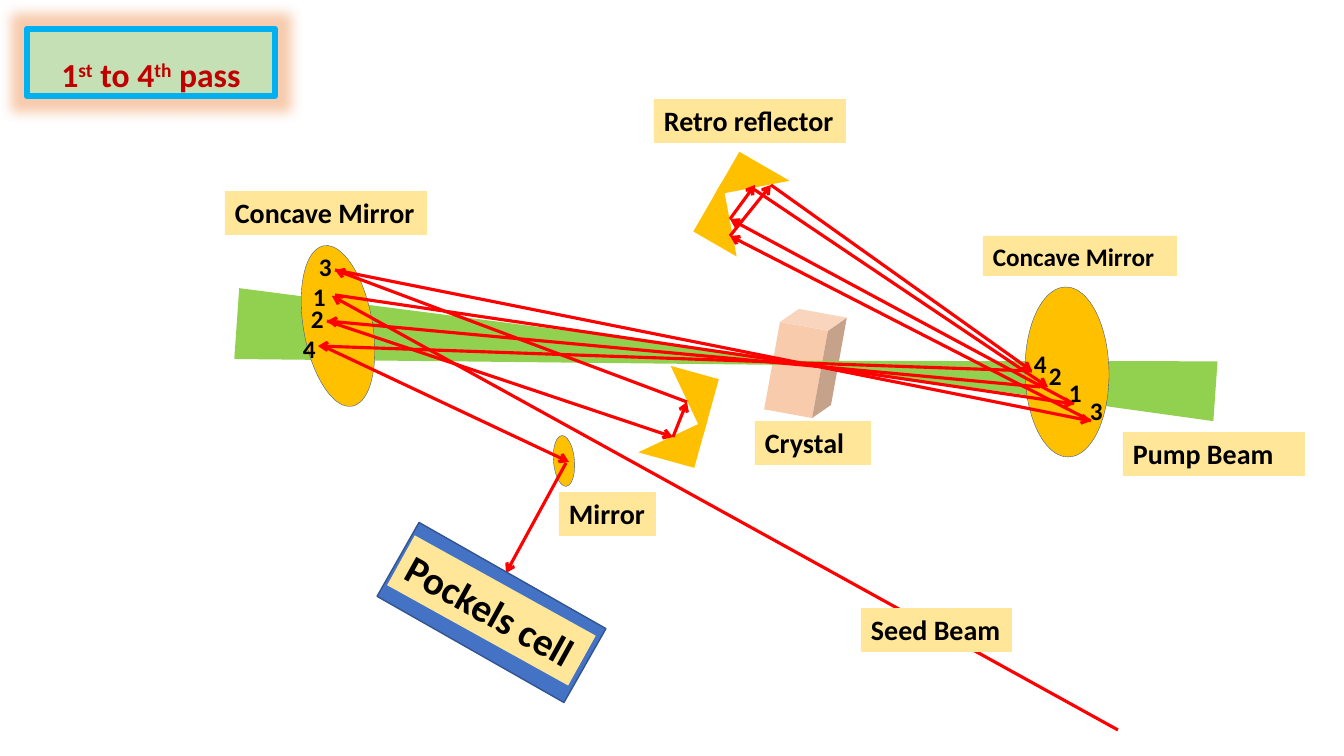
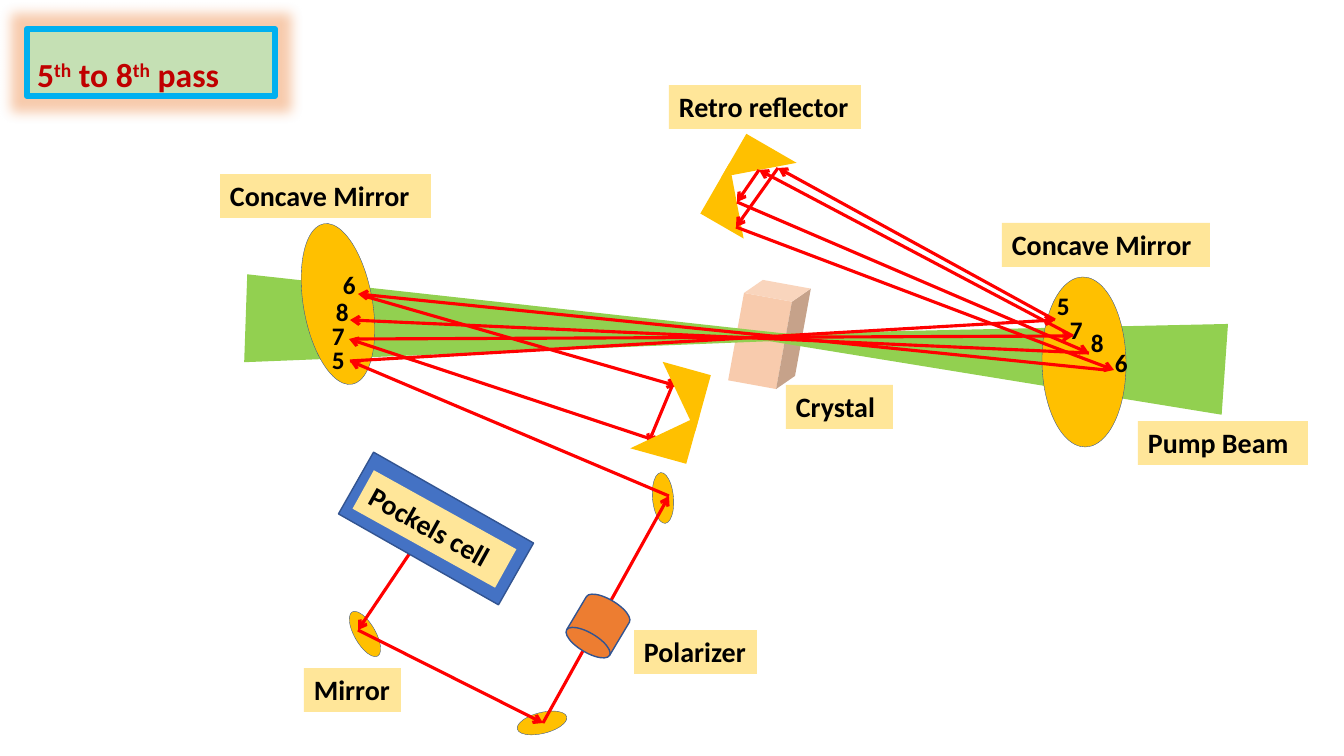
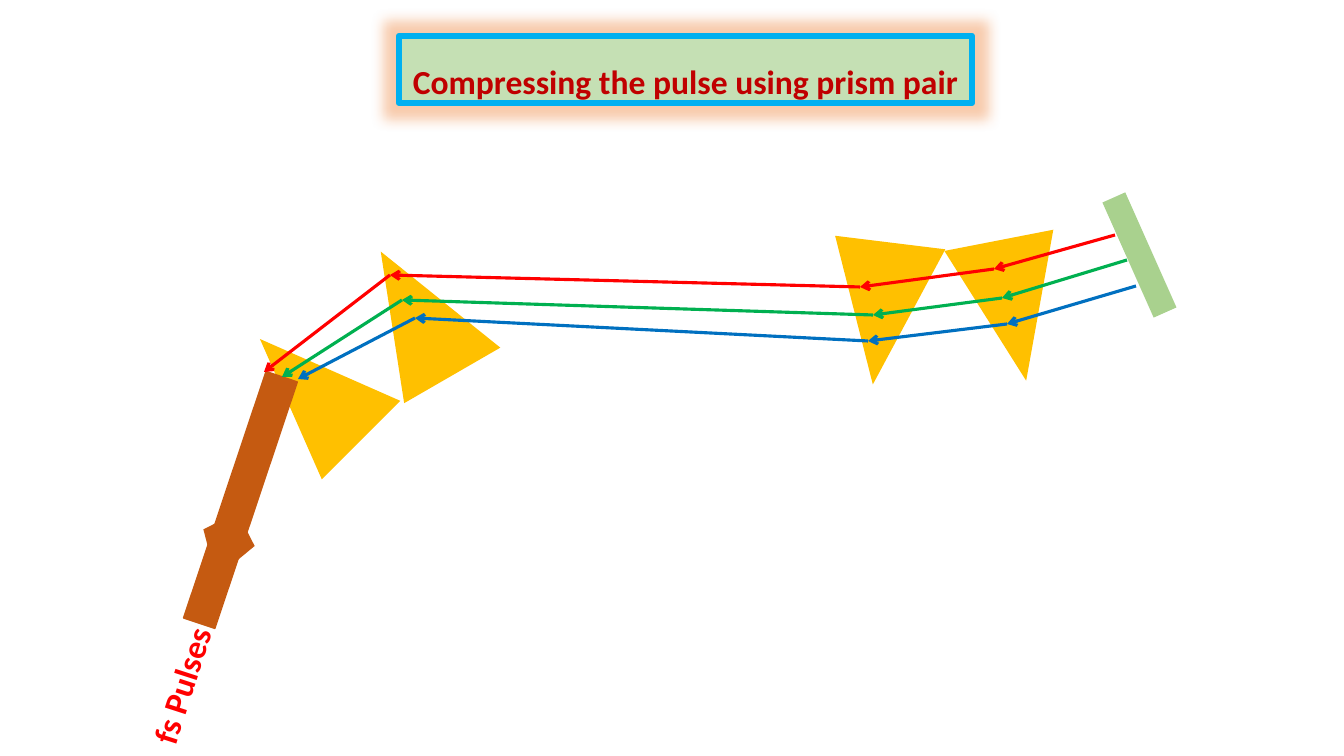
"""Build three slides on a multipass amplifier and a prism compressor."""
import math

import lxml.etree
import pptx
import pptx.dml.color
import pptx.enum.shapes
import pptx.enum.text
import pptx.oxml.ns
import pptx.util

SCALE = 914400 / 100.8
FONT = "Calibri"
HUES = {
    "gold": "FFC000", "edge": "325491", "pump": "92D050", "cube": "F8CBAD",
    "beam": "FF0000", "green": "00B050", "blue": "0070C0", "note": "FFE699",
    "cell": "4472C4", "disk": "ED7D31", "plate": "A9D18E", "pulse": "C55A11",
    "panel": "C5E0B4", "frame": "00B0F0", "title": "C00000", "ink": "000000",
}
FORMS = pptx.enum.shapes.MSO_SHAPE
ALIGN = pptx.enum.text.PP_ALIGN
LARGE = (84, 170)
TALL = (69, 163)
SMALL = (21, 51)


def px(count):
    """Turn pixels into EMU."""
    return pptx.util.Emu(round(count * SCALE))


def hue(name):
    """Look up a colour."""
    return pptx.dml.color.RGBColor.from_string(HUES[name])


def child(node, tag, **attrs):
    """Append a drawing element."""
    return lxml.etree.SubElement(node, pptx.oxml.ns.qn(tag), attrs)


def paint(item, fill, edge=None, width=1):
    """Set the fill and outline of a shape."""
    item.fill.solid()
    item.fill.fore_color.rgb = hue(fill)
    if edge:
        item.line.color.rgb = hue(edge)
        item.line.width = pptx.util.Pt(width)
    else:
        item.line.fill.background()


def write(item, parts, size, color="ink", align=ALIGN.LEFT, space=None):
    """Fill a frame run by run, raising every second part."""
    frame = item.text_frame
    frame.word_wrap = True
    frame.auto_size = pptx.enum.text.MSO_AUTO_SIZE.NONE
    frame.vertical_anchor = pptx.enum.text.MSO_ANCHOR.TOP
    line = frame.paragraphs[0]
    line.alignment = align
    if space:
        line.line_spacing = space
    for index, part in enumerate(parts):
        run = line.add_run()
        run.text = part
        run.font.name = FONT
        run.font.size = pptx.util.Pt(size)
        run.font.bold = True
        run.font.color.rgb = hue(color)
        if index % 2:
            run.font._element.set("baseline", "30000")


def form(slide, kind, box, fill, turn=0, edge=None, width=1):
    """Add a preset shape."""
    item = slide.shapes.add_shape(kind, *map(px, box))
    item.shadow.inherit = False
    item.rotation = turn
    paint(item, fill, edge, width)
    return item


def label(slide, text, box, size=20, turn=0):
    """Add a part name on a pale panel."""
    item = form(slide, FORMS.RECTANGLE, box, "note", turn)
    write(item, [text], size)
    item.text_frame.margin_right = 0


def digit(slide, text, x, y):
    """Add the number of a pass."""
    item = slide.shapes.add_textbox(px(x), px(y), px(33), px(40))
    write(item, [text], 18)


def mirror(slide, x, y, size, turn):
    """Add an oval mirror around its centre."""
    wide, high = size
    box = (x - wide / 2, y - high / 2, wide, high)
    form(slide, FORMS.OVAL, box, "gold", turn, "edge", 0.25)


def retro(slide, x, y, turn):
    """Add two right-angled prisms that form a reflector."""
    angle = math.radians(turn)
    dx = 38 * math.cos(angle) - 4 * math.sin(angle)
    dy = 38 * math.sin(angle) + 4 * math.cos(angle)
    for left, top, spin in ((x, y, turn), (x + dx, y + dy, turn - 90)):
        form(slide, FORMS.RIGHT_TRIANGLE, (left, top, 50, 58), "gold", spin)


def beam(slide, points, color="beam", width=2.25, arrow=True):
    """Join points by a chain of arrows."""
    for start, end in zip(points, points[1:]):
        item = slide.shapes.add_connector(
            pptx.enum.shapes.MSO_CONNECTOR.STRAIGHT, *map(px, start + end))
        item.line.color.rgb = hue(color)
        item.line.width = pptx.util.Pt(width)
        if arrow:
            child(item.line._get_or_add_ln(), "a:tailEnd", type="arrow")
        child(item._element.spPr, "a:effectLst")


def pockels(slide, outer, inner, size):
    """Add the tilted cell with its name."""
    form(slide, FORMS.FLOWCHART_PROCESS, outer, "cell", 29.6, "edge")
    label(slide, "Pockels cell", inner, size, 29)


def pump(slide, cube, *cones):
    """Add the crystal and the green cones that meet in it."""
    form(slide, FORMS.CUBE, (*cube, 65, 105), "cube", 10.3)
    for box, turn in cones:
        form(slide, FORMS.ISOSCELES_TRIANGLE, box, "pump", turn)


def start(deck, parts, box, align=ALIGN.CENTER):
    """Add a slide with a glowing title panel."""
    slide = deck.slides.add_slide(deck.slide_layouts[5])
    title = slide.shapes.title
    title.left, title.top, title.width, title.height = map(px, box)
    paint(title, "panel", "frame", 4.5)
    effect = child(title._element.spPr, "a:effectLst")
    glow = child(effect, "a:glow", rad="228600")
    tint = child(glow, "a:srgbClr", val=HUES["disk"])
    child(tint, "a:alpha", val="40000")
    write(title, parts, 24, "title", align, 1.5)
    return slide


def first(deck):
    """Build the slide on passes one to four."""
    slide = start(deck, ["1", "st", " to 4", "th", " pass"], (27, 29, 248, 67))
    pump(slide, (773, 311), ((501, 44, 71, 601), 94), ((968, 158, 60, 436), 274))
    mirror(slide, 564, 461, SMALL, -5)
    mirror(slide, 1067, 372, LARGE, -1)
    mirror(slide, 338, 326, TALL, -10)
    beam(slide, [(1118, 730), (332, 296)])
    retro(slide, 727, 159, 120)
    retro(slide, 648, 407, 285.5)
    for points in (
        [(335, 295), (1074, 404), (730, 219), (755, 185)],
        [(752, 188), (1048, 387)],
        [(1040, 387), (327, 321), (673, 437), (687, 402), (335, 270),
         (1091, 421), (730, 236), (771, 185), (1032, 371), (318, 346)],
        [(327, 348), (569, 462)],
        [(566, 463), (506, 573)],
    ):
        beam(slide, points)
    label(slide, "Concave Mirror", (983, 236, 194, 40), 18)
    for text, box in (
        ("Concave Mirror", (225, 191, 202, 44)),
        ("Pump Beam", (1123, 432, 182, 44)),
        ("Crystal", (755, 421, 116, 44)),
        ("Retro reflector", (654, 99, 192, 44)),
        ("Mirror", (559, 492, 97, 44)),
        ("Seed Beam", (861, 608, 151, 44)),
    ):
        label(slide, text, box)
    pockels(slide, (384, 570, 215, 85), (388, 582, 207, 57), 28)
    for text, x, y in (
        ("3", 309, 246), ("2", 301, 298), ("1", 303, 276), ("4", 293, 328),
        ("4", 1024, 343), ("3", 1080, 390), ("2", 1039, 355), ("1", 1059, 372),
    ):
        digit(slide, text, x, y)


def second(deck):
    """Build the slide on passes five to eight."""
    slide = start(deck, ["5", "th", " to 8", "th", " pass"],
                  (27, 29, 248, 67), ALIGN.LEFT)
    pump(slide, (737, 282), ((495, 35, 88, 587), 92), ((932, 104, 91, 496), 274))
    for x, y, size, turn in (
        (542, 723, SMALL, 76), (663, 498, SMALL, -5), (365, 634, SMALL, -30),
        (1084, 362, LARGE, -1), (338, 304, TALL, -10),
    ):
        mirror(slide, x, y, size, turn)
    retro(slide, 734, 141, 120)
    for points in (
        [(350, 361), (1055, 320), (778, 168), (736, 227), (1114, 370)],
        [(1106, 370), (358, 294)],
        [(364, 296), (677, 386)],
        [(673, 384), (648, 444)],
        [(651, 439), (349, 339)],
        [(355, 339), (1073, 336), (759, 170), (737, 202), (1089, 353),
         (350, 320)],
        [(443, 504), (358, 630), (543, 723), (669, 496), (350, 361)],
    ):
        beam(slide, points)
    for text, box in (
        ("Concave Mirror", (1002, 223, 208, 44)),
        ("Concave Mirror", (220, 174, 211, 44)),
        ("Pump Beam", (1138, 421, 170, 44)),
        ("Crystal", (786, 385, 107, 44)),
        ("Retro reflector", (669, 85, 192, 44)),
        ("Mirror", (304, 668, 97, 44)),
        ("Polarizer", (634, 630, 123, 44)),
    ):
        label(slide, text, box)
    for text, x, y in (
        ("6", 333, 264), ("8", 326, 291), ("7", 322, 315), ("5", 322, 339),
        ("6", 1105, 342), ("8", 1081, 322), ("5", 1047, 285), ("7", 1060, 309),
    ):
        digit(slide, text, x, y)
    pockels(slide, (344, 493, 184, 71), (353, 507, 163, 44), 20)
    form(slide, FORMS.FLOWCHART_MAGNETIC_DISK, (573, 597, 50, 58),
         "disk", 210.8, "edge")
    retro(slide, 640, 403, 285.5)


def third(deck):
    """Build the slide on the prism pair."""
    slide = start(deck, ["Compressing the pulse using prism pair"],
                  (399, 36, 573, 67))
    for x, y, turn in (
        (361, 242, 330), (255, 318, 315), (826, 242, 187), (957, 239, 169),
    ):
        form(slide, FORMS.ISOSCELES_TRIANGLE, (x, y, 111, 143), "gold", turn)
    form(slide, FORMS.RECTANGLE, (1127, 192, 25, 126), "plate", 336)
    form(slide, FORMS.RECTANGLE, (224, 370, 33, 260), "pulse", 18.5, "pulse")
    beam(slide, [(251, 470), (216, 578)], "pulse", 11)
    for color, points in (
        ("beam", [(1115, 235), (994, 269), (860, 287), (390, 275), (264, 372)]),
        ("green", [(1127, 260), (1002, 298), (873, 315), (402, 300), (282, 377)]),
        ("blue", [(1136, 286), (1007, 324), (868, 341), (415, 318), (298, 379)]),
    ):
        beam(slide, points, color)
    item = slide.shapes.add_textbox(*map(px, (91, 655, 152, 65)))
    item.rotation = 287.9
    write(item, ["fs Pulses"], 24, "beam", ALIGN.RIGHT, 1.5)


def main():
    """Build and save the deck."""
    deck = pptx.Presentation()
    deck.slide_width = px(1344)
    deck.slide_height = px(756)
    for build in (first, second, third):
        build(deck)
    deck.save("out.pptx")


if __name__ == "__main__":
    main()
